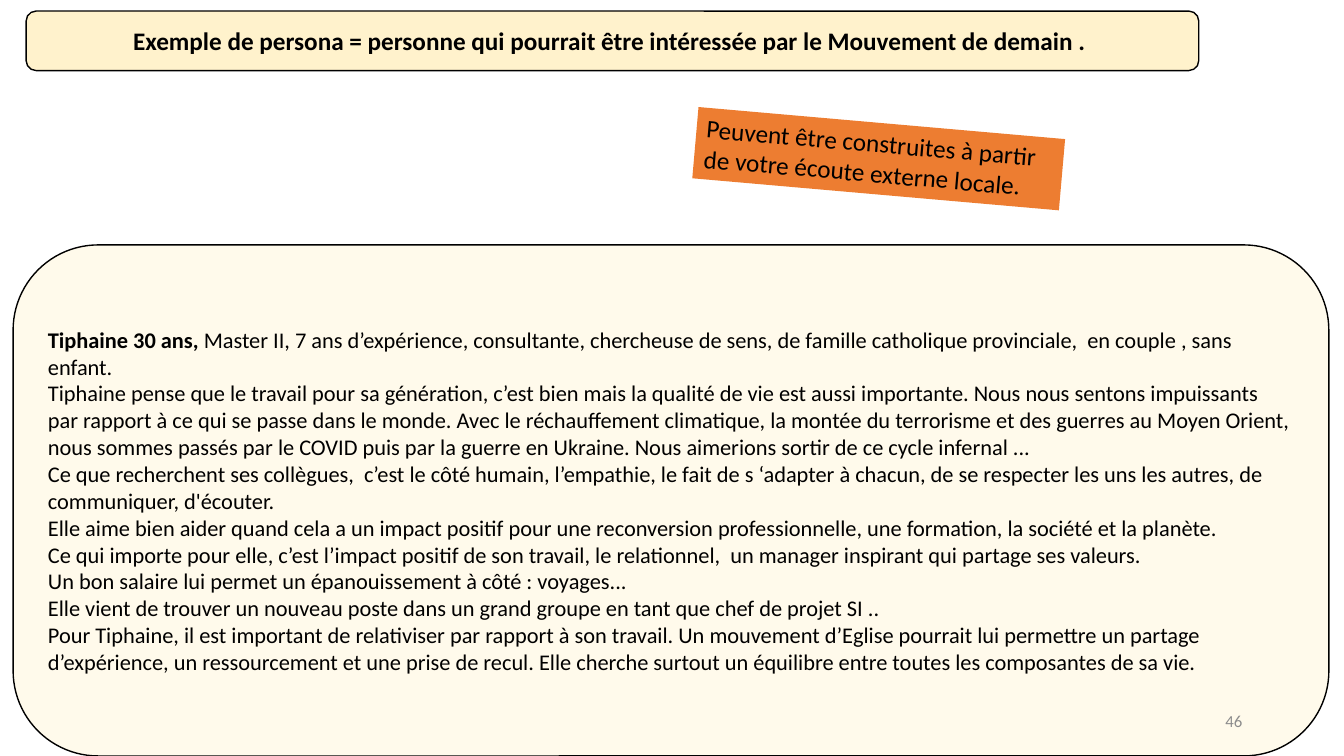
from dataclasses import dataclass

from lxml import etree
from pptx import Presentation
from pptx.dml.color import RGBColor
from pptx.enum.shapes import MSO_SHAPE
from pptx.enum.text import MSO_ANCHOR, PP_ALIGN
from pptx.oxml.ns import qn
from pptx.util import Inches, Pt

ROUNDED, RECTANGLE = MSO_SHAPE.ROUNDED_RECTANGLE, MSO_SHAPE.RECTANGLE
TOP, MIDDLE = MSO_ANCHOR.TOP, MSO_ANCHOR.MIDDLE
LEFT, CENTER, RIGHT = PP_ALIGN.LEFT, PP_ALIGN.CENTER, PP_ALIGN.RIGHT


@dataclass(frozen=True)
class Theme:
    font: str = "Calibri"
    ink: str = "000000"
    muted: str = "8C8C8C"
    cream: str = "FFF2CC"
    orange: str = "ED7D31"
    heading: int = 18
    body: int = 16
    number: int = 12
    outline: int = 1
    portrait_opacity: int = 38


THEME = Theme()
WIDTH, HEIGHT = 13.33, 7.5

TITLE = "Exemple de persona = personne qui pourrait être intéressée par le Mouvement de demain . "
ADVICE = "Peuvent être construites à partir de votre écoute externe locale.  "
PERSONA = "Tiphaine 30 ans,"
PORTRAIT = [
    " Master II, 7 ans d’expérience, consultante, chercheuse de sens, de famille catholique "
    "provinciale,  en couple , sans enfant.",
    "Tiphaine pense que le travail pour sa génération, c’est bien mais la qualité de vie est aussi "
    "importante. Nous nous sentons impuissants par rapport à ce qui se passe dans le monde. Avec le "
    "réchauffement climatique, la montée du terrorisme et des guerres au Moyen Orient, nous sommes "
    "passés par le COVID puis par la guerre en Ukraine. Nous aimerions sortir de ce cycle infernal ...",
    "Ce que recherchent ses collègues,  c’est le côté humain, l’empathie, le fait de s ‘adapter à "
    "chacun, de se respecter les uns les autres, de communiquer, d'écouter.",
    "Elle aime bien aider quand cela a un impact positif pour une reconversion professionnelle, une "
    "formation, la société et la planète.",
    "Ce qui importe pour elle, c’est l’impact positif de son travail, le relationnel,  un manager "
    "inspirant qui partage ses valeurs.",
    "Un bon salaire lui permet un épanouissement à côté : voyages...",
    "Elle vient de trouver un nouveau poste dans un grand groupe en tant que chef de projet SI ..",
    "Pour Tiphaine, il est important de relativiser par rapport à son travail. Un mouvement d’Eglise "
    "pourrait lui permettre un partage d’expérience, un ressourcement et une prise de recul. Elle "
    "cherche surtout un équilibre entre toutes les composantes de sa vie. ",
]


def add_panel(slide, box, outline_kind, fill, outlined=True):
    panel = slide.shapes.add_shape(outline_kind, *map(Inches, box))
    panel.shadow.inherit = False
    panel.fill.solid()
    panel.fill.fore_color.rgb = RGBColor.from_string(fill)
    if outlined:
        panel.line.color.rgb = RGBColor.from_string(THEME.ink)
        panel.line.width = Pt(THEME.outline)
    else:
        panel.line.fill.background()
    return panel


def write(holder, paragraphs, size, align=LEFT, anchor=MIDDLE, color=THEME.ink, bold=None):
    frame = holder.text_frame
    frame.word_wrap = True
    frame.vertical_anchor = anchor
    frame.text = "\n".join(paragraphs)
    for paragraph in frame.paragraphs:
        paragraph.alignment = align
        paragraph.font.name = THEME.font
        paragraph.font.size = Pt(size)
        paragraph.font.bold = bold
        paragraph.font.color.rgb = RGBColor.from_string(color)
    return frame


def add_portrait(slide, box):
    panel = add_panel(slide, box, ROUNDED, THEME.cream)
    tint = panel.fill._xPr.find(qn("a:solidFill"))[0]
    etree.SubElement(tint, qn("a:alpha"), val=str(THEME.portrait_opacity * 1000))
    introduction = write(panel, [PERSONA, *PORTRAIT[1:]], THEME.body).paragraphs[0]
    introduction.runs[0].font.bold = True
    introduction.add_run().text = PORTRAIT[0]


def add_title(slide, box):
    write(add_panel(slide, box, ROUNDED, THEME.cream), [TITLE], THEME.heading, CENTER, bold=True)


def add_advice(slide, box):
    label = add_panel(slide, box, RECTANGLE, THEME.orange, outlined=False)
    label.rotation = 5
    write(label, [ADVICE], THEME.heading, anchor=TOP)


def add_page_number(slide, box):
    number = slide.shapes.add_textbox(*map(Inches, box))
    write(number, ["46"], THEME.number, RIGHT, color=THEME.muted)


def build_persona_slide(deck):
    slide = deck.slides.add_slide(deck.slide_layouts[6])
    portrait_top = 2.43
    add_portrait(slide, (0.13, portrait_top, 13.05, HEIGHT - portrait_top))
    add_title(slide, (0.26, 0.11, 11.63, 0.59))
    add_advice(slide, (6.89, 1.22, 3.65, 0.71))
    add_page_number(slide, (9.42, 6.95, 3, 0.4))


def main():
    deck = Presentation()
    deck.slide_width, deck.slide_height = Inches(WIDTH), Inches(HEIGHT)
    build_persona_slide(deck)
    deck.save("out.pptx")


if __name__ == "__main__":
    main()
